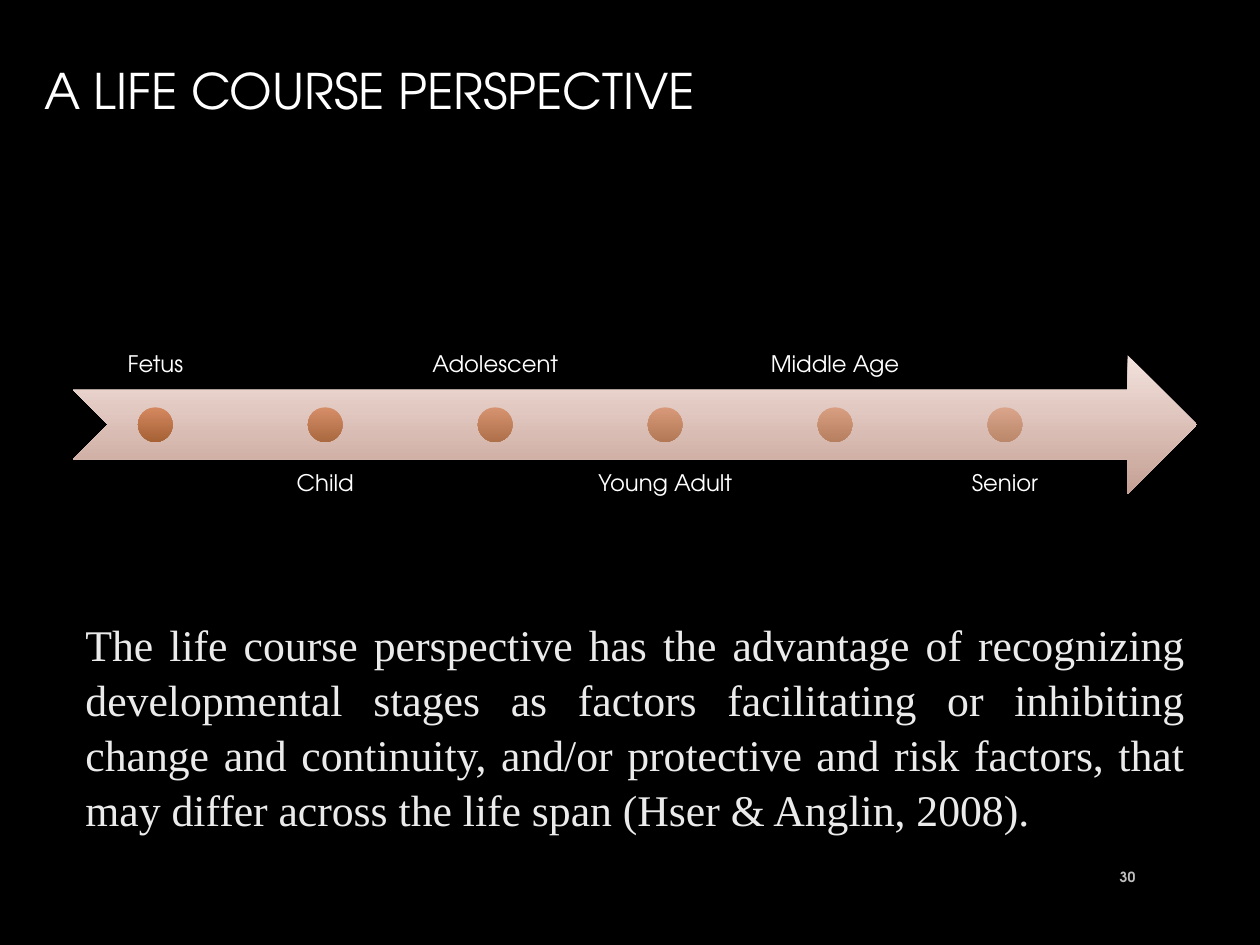
from dataclasses import dataclass
from lxml.etree import SubElement
from pptx import Presentation
from pptx.dml.color import RGBColor
from pptx.enum.shapes import MSO_SHAPE
from pptx.enum.text import MSO_ANCHOR, PP_ALIGN
from pptx.oxml.ns import qn
from pptx.util import Inches, Pt


@dataclass(frozen=True)
class Theme:
    background: str = "000000"
    bright: str = "FFFFFF"
    soft: str = "EBEBEB"
    muted: str = "BFBFBF"
    arrow: tuple = ("F3E2DD", "C5A094")
    dot: tuple = ("D48256", "A15828")
    sans: str = "TeX Gyre Adventor"
    serif: str = "Times New Roman"
    title_size: int = 28
    body_size: int = 25
    label_size: int = 13
    number_size: int = 8


def write_text(box, text, size, color, font=Theme.sans, align=PP_ALIGN.LEFT,
               anchor=MSO_ANCHOR.TOP, inset=None, spacing=1.0, bold=False):
    frame = box.text_frame
    frame.word_wrap = True
    frame.vertical_anchor = anchor
    if inset is not None:
        frame.margin_left = frame.margin_right = Inches(inset)
        frame.margin_top = frame.margin_bottom = Inches(inset)
    para = frame.paragraphs[0]
    para.alignment = align
    para.line_spacing = spacing
    para.space_before = Pt(0)
    span = para.add_run()
    span.text = text
    span.font.name = font
    span.font.size = Pt(size)
    span.font.bold = bold
    span.font.color.rgb = RGBColor.from_string(color)


def add_gradient_shape(shapes, kind, place, colors, opacity=100):
    shape = shapes.add_shape(kind, *map(Inches, place))
    shape.shadow.inherit = False
    shape.line.fill.background()
    shape.fill.gradient()
    shape.fill.gradient_angle = 270
    for stop, color in zip(shape.fill.gradient_stops, colors):
        stop.color.rgb = RGBColor.from_string(color)
    if opacity < 100:
        for color in shape.fill._xPr.iter(qn("a:srgbClr")):
            SubElement(color, qn("a:alpha"), val=str(opacity * 1000))


theme = Theme()
deck = Presentation()
deck.slide_width, deck.slide_height = Inches(10), Inches(7.5)
page = deck.slides.add_slide(deck.slide_layouts[5])
page.background.fill.solid()
page.background.fill.fore_color.rgb = RGBColor.from_string(theme.background)

title = page.shapes.title
title.left, title.top = Inches(0.25), Inches(0.25)
title.width, title.height = Inches(9.25), Inches(0.92)
write_text(title, "A LIFE COURSE PERSPECTIVE", theme.title_size, theme.bright,
           anchor=MSO_ANCHOR.MIDDLE)

left, top, width, height = 0.58, 2.82, 8.92, 1.1
stages = ["Fetus", "Child", "Adolescent", "Young Adult", "Middle Age", "Senior"]
gap_share = 0.05
column = 0.9 * width / (len(stages) + (len(stages) - 1) * gap_share)
pitch = column * (1 + gap_share)
dot = height / 4

timeline = page.shapes.add_group_shape().shapes
add_gradient_shape(timeline, MSO_SHAPE.NOTCHED_RIGHT_ARROW,
                   (left, top, width, height), theme.arrow)
for index, stage in enumerate(stages):
    above = index % 2 == 0
    column_left = left + 0.01 + index * pitch
    label_top = top + height * (-0.75 if above else 0.75)
    label = timeline.add_textbox(*map(Inches, (column_left, label_top, column, height)))
    write_text(label, stage, theme.label_size, theme.bright, align=PP_ALIGN.CENTER,
               anchor=MSO_ANCHOR.BOTTOM if above else MSO_ANCHOR.TOP,
               inset=0.1, spacing=0.9)
    add_gradient_shape(timeline, MSO_SHAPE.OVAL,
                       (column_left + (column - dot) / 2, top + (height - dot) / 2, dot, dot),
                       theme.dot, opacity=90 - 8 * index)

number = page.shapes.add_textbox(*map(Inches, (8.66, 6.76, 0.45, 0.4)))
write_text(number, "30", theme.number_size, theme.muted, align=PP_ALIGN.RIGHT,
           anchor=MSO_ANCHOR.MIDDLE, bold=True)

summary = page.shapes.add_textbox(*map(Inches, (left, 4.83, width, 1.83)))
write_text(summary,
           "The life course perspective has the advantage of recognizing developmental "
           "stages as factors facilitating or inhibiting change and continuity, and/or "
           "protective and risk factors, that may differ across the life span "
           "(Hser & Anglin, 2008).",
           theme.body_size, theme.soft, font=theme.serif, align=PP_ALIGN.JUSTIFY,
           spacing=1.05)

deck.save("out.pptx")
